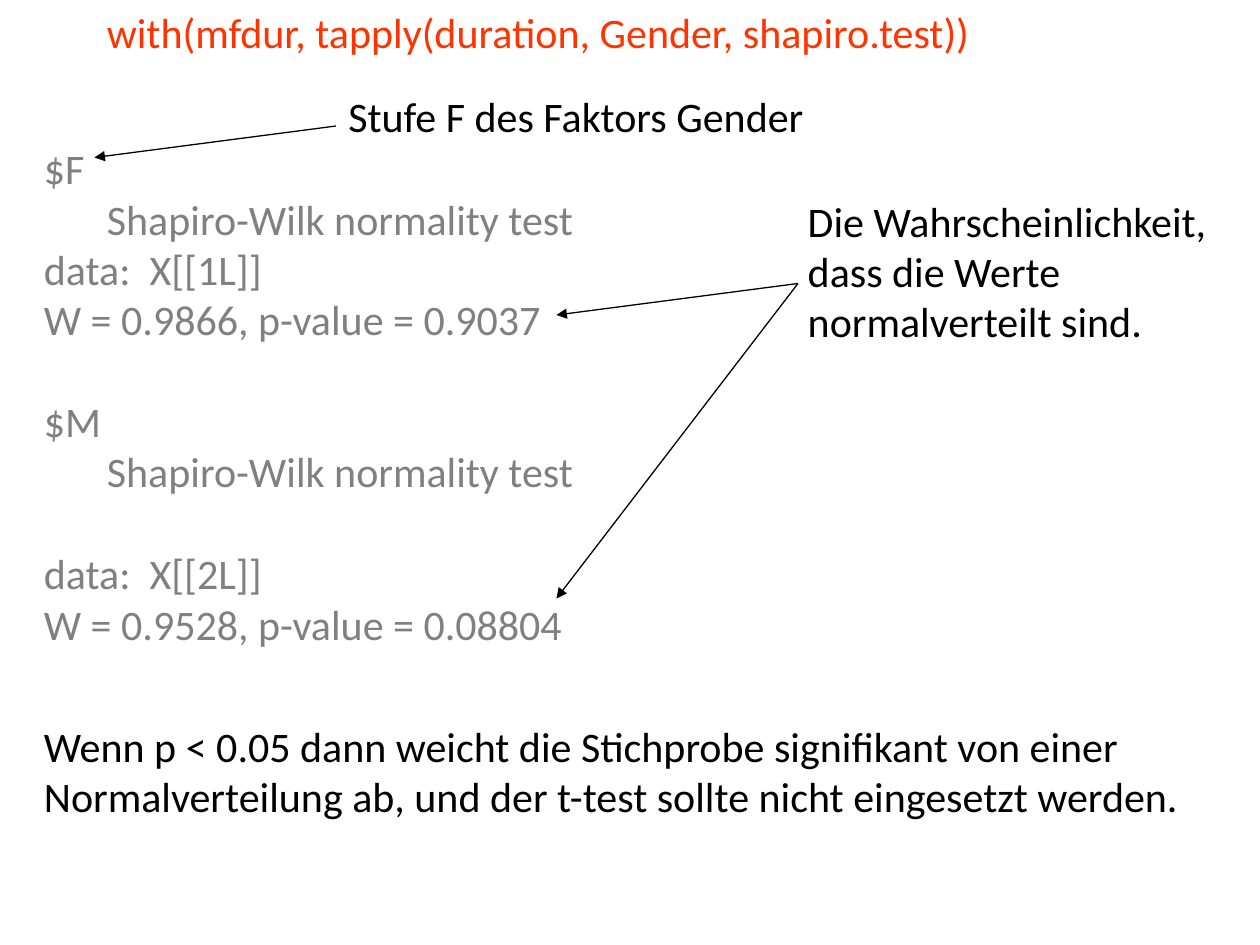
from dataclasses import dataclass

import pptx
import pptx.dml.color
import pptx.enum.shapes
import pptx.enum.text
import pptx.oxml
import pptx.oxml.ns
import pptx.util

EMU_PER_PX = 9525
FONT_NAME = "Calibri"
FONT_SIZE = 24
BLANK_LINE = 29.3
COLORS = {"output": "808080", "command": "FF3300", "note": "000000", "arrow": "000000"}


@dataclass(frozen=True)
class TextBlock:
    left: int
    top: int
    width: int
    height: int
    color: str
    lines: tuple[str, ...]
    gaps_before: tuple[int, ...] = ()
    wrap: bool = True


@dataclass(frozen=True)
class Arrow:
    start: tuple[int, int]
    end: tuple[int, int]


PROBABILITY_POINT = (608, 216)

TEXT_BLOCKS = (
    TextBlock(24, 104, 582, 397, "output", (
        "$F",
        "\tShapiro-Wilk normality test",
        "data:  X[[1L]]",
        "W = 0.9866, p-value = 0.9037",
        "$M",
        "\tShapiro-Wilk normality test",
        "data:  X[[2L]]",
        "W = 0.9528, p-value = 0.08804",
    ), gaps_before=(4, 6)),
    TextBlock(72, 0, 684, 48, "command",
              ("with(mfdur, tapply(duration, Gender, shapiro.test))",), wrap=False),
    TextBlock(606, 144, 354, 126, "note",
              ("Die Wahrscheinlichkeit, dass die Werte normalverteilt sind.",)),
    TextBlock(24, 544, 896, 87, "note",
              ("Wenn p < 0.05 dann weicht die Stichprobe signifikant von einer "
               "Normalverteilung ab, und der t-test sollte nicht eingesetzt werden.",)),
    TextBlock(256, 64, 432, 48, "note", ("Stufe F des Faktors Gender",)),
)

ARROWS = (
    Arrow(PROBABILITY_POINT, (424, 240)),
    Arrow(PROBABILITY_POINT, (424, 456)),
    Arrow((256, 96), (72, 120)),
)


def px(length: int) -> pptx.util.Emu:
    return pptx.util.Emu(length * EMU_PER_PX)


def rgb(name: str) -> pptx.dml.color.RGBColor:
    return pptx.dml.color.RGBColor.from_string(COLORS[name])


def draw_text(slide: pptx.slide.Slide, block: TextBlock) -> None:
    shape = slide.shapes.add_textbox(
        px(block.left), px(block.top), px(block.width), px(block.height))
    text_frame = shape.text_frame
    text_frame.word_wrap = block.wrap
    text_frame.auto_size = pptx.enum.text.MSO_AUTO_SIZE.SHAPE_TO_FIT_TEXT
    text_frame.text = "\n".join(block.lines)
    for index, paragraph in enumerate(text_frame.paragraphs):
        if index in block.gaps_before:
            paragraph.space_before = pptx.util.Pt(BLANK_LINE)
        for run in paragraph.runs:
            run.font.name = FONT_NAME
            run.font.size = pptx.util.Pt(FONT_SIZE)
            run.font.color.rgb = rgb(block.color)


def draw_arrow(slide: pptx.slide.Slide, arrow: Arrow) -> None:
    connector = slide.shapes.add_connector(
        pptx.enum.shapes.MSO_CONNECTOR.STRAIGHT,
        *map(px, arrow.start + arrow.end))
    connector.line.color.rgb = rgb("arrow")
    connector.line.width = pptx.util.Pt(0.75)
    line = connector.line._get_or_add_ln()
    tail = pptx.oxml.parse_xml(
        f'<a:tailEnd {pptx.oxml.ns.nsdecls("a")} type="triangle"/>')
    line.append(tail)
    effects = pptx.oxml.parse_xml(f'<a:effectLst {pptx.oxml.ns.nsdecls("a")}/>')
    line.addnext(effects)


def main() -> None:
    presentation = pptx.Presentation()
    presentation.slide_width = px(960)
    presentation.slide_height = px(720)
    slide = presentation.slides.add_slide(presentation.slide_layouts[6])
    for block in TEXT_BLOCKS:
        draw_text(slide, block)
    for arrow in ARROWS:
        draw_arrow(slide, arrow)
    presentation.save("out.pptx")


if __name__ == "__main__":
    main()
